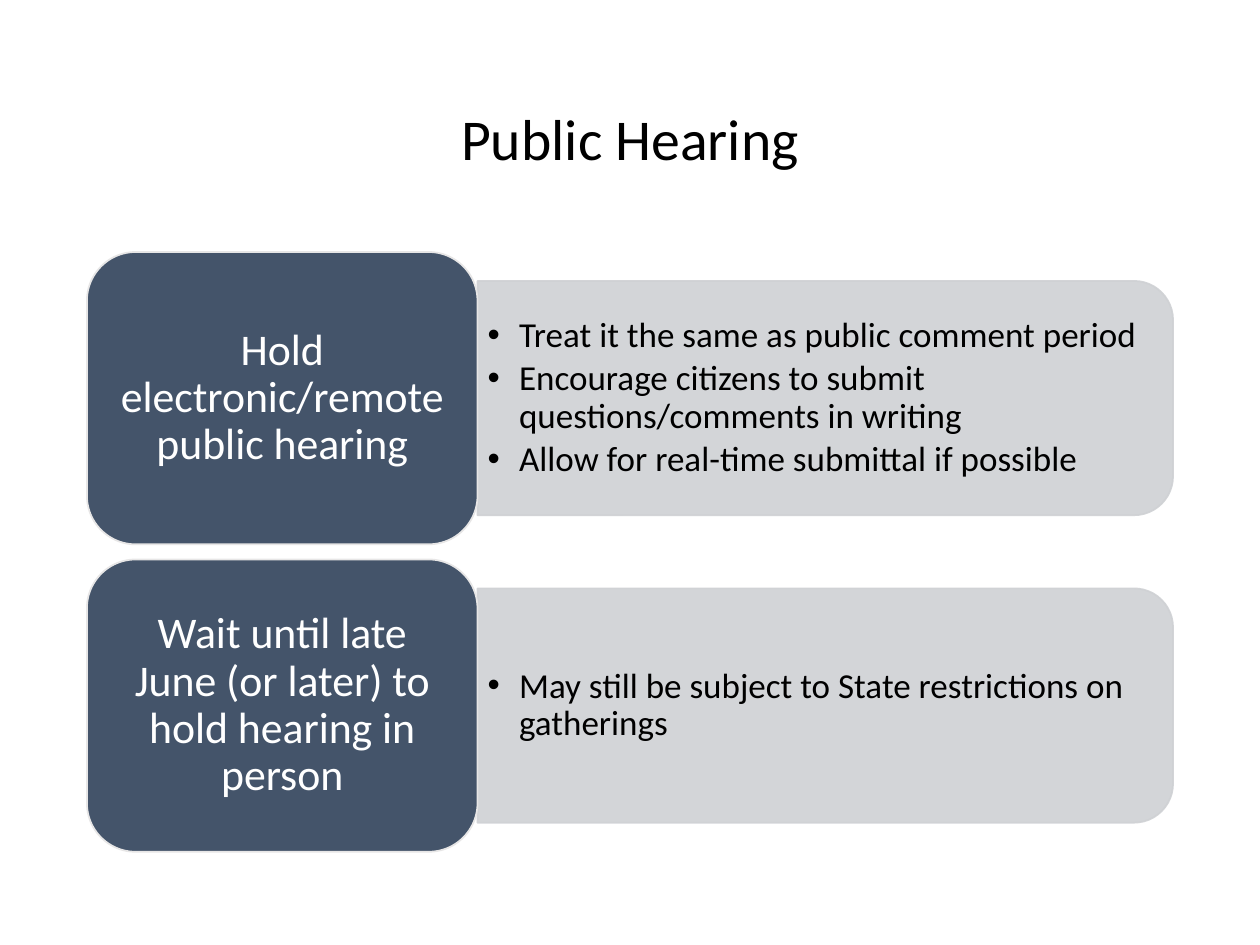
from lxml.etree import SubElement
from pptx import Presentation
from pptx.dml.color import RGBColor
from pptx.enum.shapes import MSO_SHAPE as Shape
from pptx.enum.text import MSO_ANCHOR as Anchor, PP_ALIGN as Align
from pptx.oxml.ns import qn
from pptx.util import Inches, Pt

LEFT, TOP = 0.69, 2
CARD_W, CARD_H = 3.1, 2.32
PANEL_W, PANEL_H = 5.52, 1.86
ROW_STEP = 2.44
NAVY, GREY, PALE, BLACK, WHITE = "44546A", "CFD1D4", "E7E6E6", "000000", "FFFFFF"

OPTIONS = [
    ("Hold electronic/remote public hearing",
     ["Treat it the same as public comment period",
      "Encourage citizens to submit questions/comments in writing",
      "Allow for real-time submittal if possible"]),
    ("Wait until late June (or later) to hold hearing in person",
     ["May still be subject to State restrictions on gatherings"]),
]


def color(hex_code):
    return RGBColor.from_string(hex_code)


def write(frame, lines, size, font_color=BLACK, align=Align.LEFT, after=0,
          insets=(0.1, 0.05), bulleted=False):
    frame.word_wrap = True
    frame.vertical_anchor = Anchor.MIDDLE
    frame.margin_left = frame.margin_right = Inches(insets[0])
    frame.margin_top = frame.margin_bottom = Inches(insets[1])
    for index, line in enumerate(lines):
        paragraph = frame.add_paragraph() if index else frame.paragraphs[0]
        paragraph.alignment = align
        paragraph.line_spacing = 0.9
        paragraph.space_before = Pt(0)
        paragraph.space_after = Pt(after)
        run = paragraph.add_run()
        run.text = line
        run.font.name = "Calibri"
        run.font.size = Pt(size)
        run.font.color.rgb = color(font_color)
        if bulleted:
            add_bullet(paragraph)


def add_bullet(paragraph):
    props = paragraph._p.get_or_add_pPr()
    props.set("marL", str(Inches(0.25)))
    props.set("indent", str(-Inches(0.25)))
    SubElement(props, qn("a:buFont"), typeface="Arial")
    SubElement(props, qn("a:buChar"), char="•")


def add_block(slide, kind, left, top, width, height, fill, line):
    block = slide.shapes.add_shape(
        kind, Inches(left), Inches(top), Inches(width), Inches(height))
    block.shadow.inherit = False
    block.fill.solid()
    block.fill.fore_color.rgb = color(fill)
    block.line.color.rgb = color(line)
    block.line.width = Pt(1)
    return block


def add_panel(slide, left, middle, points):
    """Grey panel rounded on its right side, with a bulleted list on it."""
    # The preset rounds its top corners, so it is drawn upright and turned 90°.
    panel = add_block(slide, Shape.ROUND_2_SAME_RECTANGLE,
                      left + (PANEL_W - PANEL_H) / 2, middle - PANEL_W / 2,
                      PANEL_H, PANEL_W, GREY, GREY)
    panel.rotation = 90
    for tint in panel._element.spPr.iter(qn("a:srgbClr")):
        SubElement(tint, qn("a:alpha"), val="90000")

    text_w, text_h = 5.43, 1.68
    points_box = slide.shapes.add_textbox(
        Inches(left), Inches(middle - text_h / 2), Inches(text_w), Inches(text_h))
    write(points_box.text_frame, points, 20, after=3, insets=(0.08, 0.04),
          bulleted=True)


def add_card(slide, left, top, heading):
    card = add_block(slide, Shape.ROUNDED_RECTANGLE, left, top, CARD_W, CARD_H,
                     NAVY, PALE)
    # The rounded corners already inset the text area, so margins stay small.
    write(card.text_frame, [heading], 25, WHITE, Align.CENTER, after=8.75,
          insets=(0.09, 0.05))


def add_title(slide, text):
    title = slide.shapes.title
    title.left, title.top = Inches(LEFT), Inches(0.4)
    title.width, title.height = Inches(8.62), Inches(1.45)
    write(title.text_frame, [text], 33, align=Align.CENTER)


def main():
    deck = Presentation()
    deck.slide_width, deck.slide_height = Inches(10), Inches(7.5)
    slide = deck.slides.add_slide(deck.slide_layouts[5])
    add_title(slide, "Public Hearing")
    for row, (heading, points) in enumerate(OPTIONS):
        top = TOP + row * ROW_STEP
        add_panel(slide, LEFT + CARD_W, top + CARD_H / 2, points)
        add_card(slide, LEFT, top, heading)
    deck.save("out.pptx")


if __name__ == "__main__":
    main()
